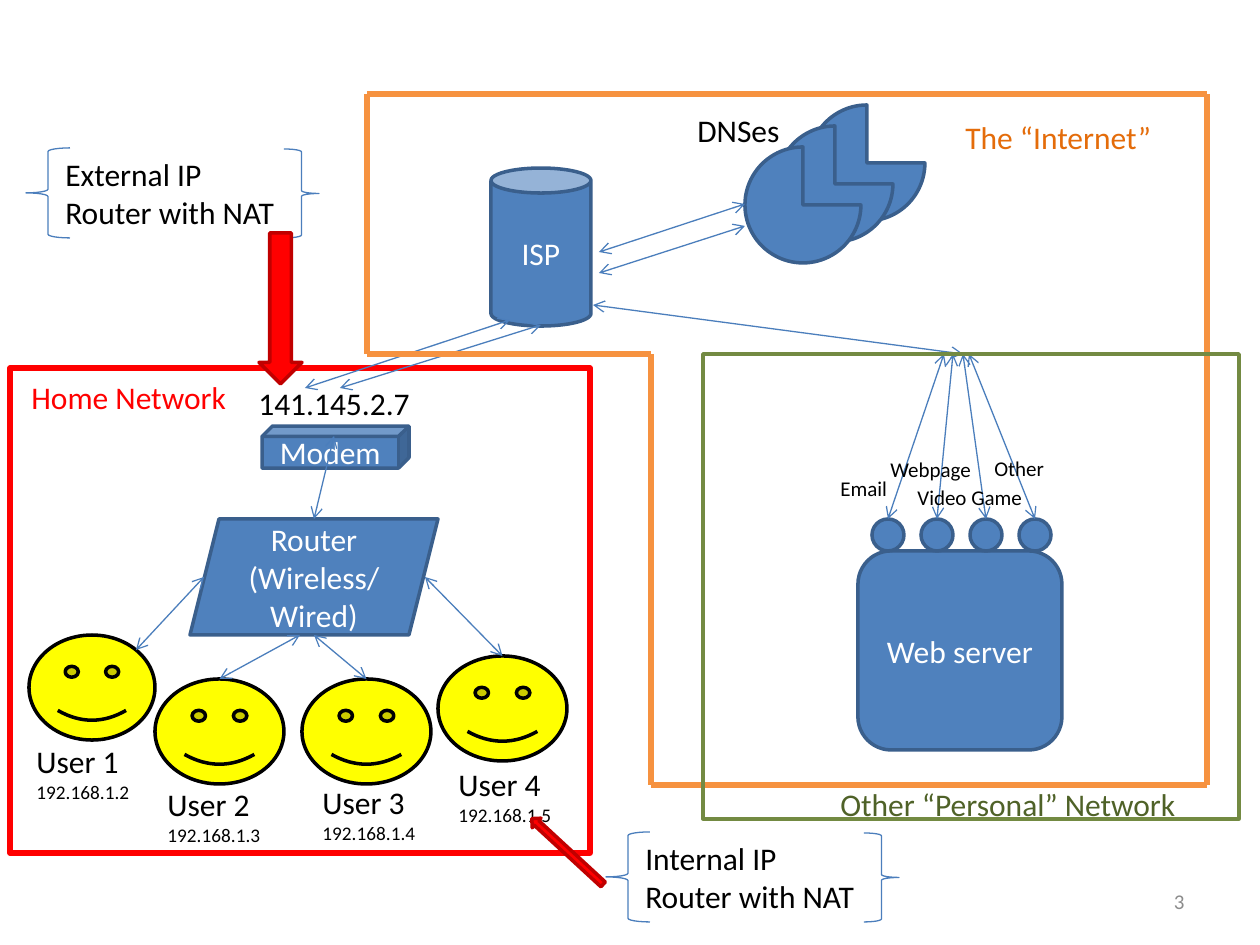
from pptx import Presentation
from pptx.util import Emu, Pt
from pptx.dml.color import RGBColor
from pptx.enum.shapes import MSO_SHAPE, MSO_CONNECTOR
from pptx.enum.text import PP_ALIGN, MSO_ANCHOR, MSO_AUTO_SIZE
from pptx.oxml.ns import qn
from lxml.etree import SubElement

BLUE, EDGE, WIRE = "4F81BD", "3A5F8C", "4B7EBC"
BLACK, RED, ORANGE = "000000", "FF0000", "F69240"

USERS = [
    ((29, 635, 126, 105), ("User 1", "192.168.1.2"), (24, 736)),
    ((155, 679, 129, 105), ("User 2", "192.168.1.3"), (155, 779)),
    ((302, 679, 129, 105), ("User 3", "192.168.1.4"), (310, 777)),
    ((438, 656, 129, 105), ("User 4", "192.168.1.5"), (446, 759)),
]
USER_LINKS = [((136, 650), (204, 577)), ((219, 679), (300, 635)),
              ((367, 679), (314, 635)), ((503, 656), (425, 577))]
DEVICES = [
    (MSO_SHAPE.PARALLELOGRAM, (190, 519, 248, 116), "Router (Wireless/Wired)"),
    (MSO_SHAPE.CUBE, (262, 426, 147, 42), "Modem"),
    (MSO_SHAPE.CAN, (491, 168, 100, 158), "ISP"),
    (MSO_SHAPE.FLOWCHART_ALTERNATE_PROCESS, (858, 551, 204, 199), "Web server"),
]
LINKS = [
    ((334, 436), (314, 519)),
    ((541, 325), (340, 388)),
    ((510, 320), (305, 388)),
    ((745, 204), (599, 252)),
    ((745, 226), (599, 273)),
    ((593, 305), (963, 354)),
]
PORT_LINK_TOPS = [944, 953, 963, 969]
INTERNET = [(367, 94), (1207, 94), (1207, 785), (651, 785), (651, 354), (367, 354)]
LABELS = [
    ("141.145.2.7", (246, 378, 242, 50), 18, BLACK),
    ("Email", (828, 469, 101, 38), 12, BLACK),
    ("Webpage", (878, 450, 163, 38), 12, BLACK),
    ("Video Game", (905, 478, 163, 38), 12, BLACK),
    ("Other", (982, 449, 163, 38), 12, BLACK),
    ("Home Network", (19, 372, 242, 50), 18, RED),
    ("The “Internet”", (953, 112, 242, 50), 18, "E46C0A"),
    ("Other “Personal” Network", (828, 779, 367, 50), 18, "4F6228"),
    ("DNSes", (685, 105, 242, 50), 18, BLACK),
]
NOTES = [
    ("External IP\nRouter with NAT", (26, 148), (205, 287, 151, 43), 90),
    ("Internal IP\nRouter with NAT", (606, 832), (519, 845, 97, 13), 222.7),
]

PX = 914400 / 126
prs = Presentation()
prs.slide_width, prs.slide_height = Emu(9144000), Emu(6858000)
s = prs.slides.add_slide(prs.slide_layouts[6])


def px(values):
    return [Emu(round(v * PX)) for v in values]


def rgb(value):
    return RGBColor.from_string(value)


def style(p, size, color):
    for r in p.runs:
        r.font.name, r.font.size = "Calibri", Pt(size)
        r.font.color.rgb = rgb(color)


def shape(kind, box, fill=BLUE, line=EDGE, width=2, text="", rot=0):
    sp = s.shapes.add_shape(kind, *px(box))
    sp.shadow.inherit = False
    sp.rotation = rot
    if fill:
        sp.fill.solid()
        sp.fill.fore_color.rgb = rgb(fill)
    else:
        sp.fill.background()
    sp.line.color.rgb = rgb(line)
    sp.line.width = Pt(width)
    if text:
        tf = sp.text_frame
        tf.text = text
        tf.vertical_anchor = MSO_ANCHOR.MIDDLE
        tf.paragraphs[0].alignment = PP_ALIGN.CENTER
        style(tf.paragraphs[0], 18, "FFFFFF")
    return sp


def line(start, end, color=WIRE, width=0.75, arrows=True):
    cn = s.shapes.add_connector(MSO_CONNECTOR.STRAIGHT, *px(start + end))
    cn.line.color.rgb = rgb(color)
    cn.line.width = Pt(width)
    if arrows:
        ln = cn.line._get_or_add_ln()
        for tag in ("a:headEnd", "a:tailEnd"):
            SubElement(ln, qn(tag), type="arrow")
    SubElement(cn._element.spPr, qn("a:effectLst"))
    return cn


def label(text, box, sizes, color=BLACK, wrap=True):
    tb = s.shapes.add_textbox(*px(box))
    tf = tb.text_frame
    tf.text = text
    tf.word_wrap = wrap
    tf.auto_size = MSO_AUTO_SIZE.SHAPE_TO_FIT_TEXT
    for p, size in zip(tf.paragraphs, sizes):
        style(p, size, color)
    return tf


faces = [shape(MSO_SHAPE.SMILEY_FACE, box, "FFFF00", BLACK) for box, _, _ in USERS]
for kind, box, text in DEVICES:
    shape(kind, box, text=text)
for i, (face, (start, end)) in enumerate(zip(faces, USER_LINKS)):
    cn = line(start, end)
    if i:
        cn.begin_connect(face, 0)
shape(MSO_SHAPE.RECTANGLE, (10, 368, 580, 485), None, RED, 3)
for i in range(3):
    shape(MSO_SHAPE.PIE, (809 - 32 * i, 105 + 21 * i, 116, 116))
for start, end in LINKS:
    line(start, end)
for i, top in enumerate(PORT_LINK_TOPS):
    x = 872 + 49 * i
    port = shape(MSO_SHAPE.OVAL, (x, 519, 32, 32))
    line((top, 354), (x + 16, 519)).end_connect(port, 0)
for start, end in zip(INTERNET, INTERNET[1:] + INTERNET[:1]):
    line(start, end, ORANGE, 3, False)
shape(MSO_SHAPE.RECTANGLE, (703, 354, 536, 465), None, "738A42", 2)

for text, box, size, color in LABELS:
    label(text, box, [size], color)
for _, lines, at in USERS:
    label("\n".join(lines), at + (121, 74), (18, 11))
for text, (x, y), arrow, rot in NOTES:
    shape(MSO_SHAPE.LEFT_BRACE, (x, y, 44, 90), None, WIRE, 0.75)
    shape(MSO_SHAPE.RIGHT_BRACE, (x + 258, y + 1, 35, 89), None, WIRE, 0.75)
    label(text, (x + 27, y + 1, 237, 89), (18, 18), wrap=False)
    shape(MSO_SHAPE.RIGHT_ARROW, arrow, RED, "C00000", rot=rot)

tf = label("3", (903, 876, 294, 50), [12], "8C8C8C")
tf.auto_size = MSO_AUTO_SIZE.NONE
tf.vertical_anchor = MSO_ANCHOR.MIDDLE
tf.paragraphs[0].alignment = PP_ALIGN.RIGHT

prs.save("out.pptx")
